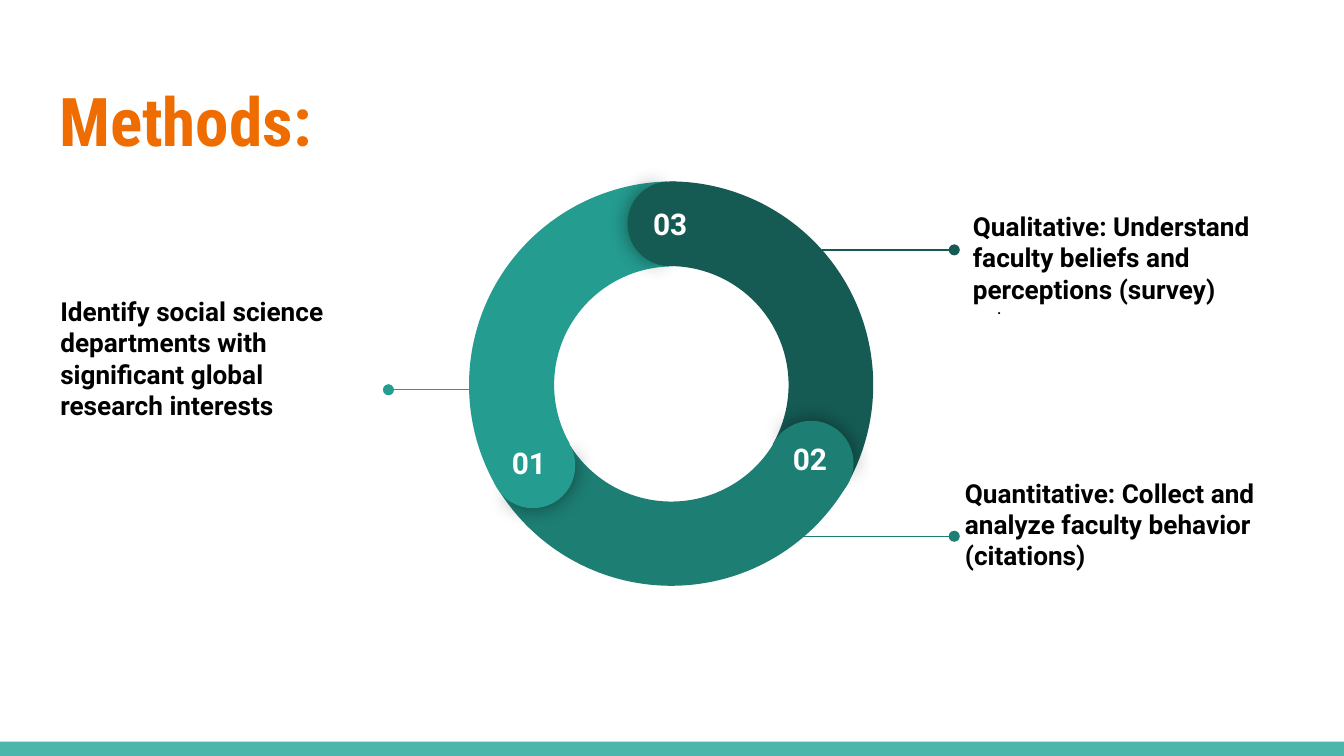
from lxml import etree
from pptx import Presentation
from pptx.dml.color import RGBColor
from pptx.enum import shapes, text
from pptx.oxml.ns import qn
from pptx.util import Pt

COLORS = {"bar": "4DB6AC", "title": "EF6C00", "text": "000000", "label": "FFFFFF",
          "light": "249C90", "medium": "1D7E74", "dark": "155B54"}
INSET = 7.2
RING_SIZE, CAP_SIZE = 218, 45.4

# Boxes are (left, top, width, height) in points.
TITLE = ("Methods:", (24.5, 35.3, 671, 55.4))
# Ring segments: color, (left, top), rotation, arc adjustments
SEGMENTS = [
    ("dark", (249.8, 97.2), 60, (126.225, 197.816, 0.208)),
    ("medium", (250.6, 95.8), 180, (126.225, 196.628, 0.207)),
    ("light", (251.3, 97.2), 300, (126.225, 197.033, 0.209)),
]
# Rounded ends: color, (left, top), rotations of shaded and plain half, number, number position
CAPS = [
    ("light", (262.8, 226.8), (240.6, 60), "01", (265.7, 231.1)),
    ("dark", (336.2, 97.2), (0.7, 180), "03", (341.3, 103)),
    ("medium", (411.8, 225.4), (120.7, 300), "02", (416.2, 229)),
]
CAP_HALVES = [(61.904, 149.962), (40.283, 171.837)]
# Callout lines: color, start x, end x, y
LEADERS = [("light", 257.8, 208.1, 208.8), ("dark", 410.4, 511.2, 133.9),
           ("medium", 410.4, 511.2, 287.3)]
MIDDLE, TOP = text.MSO_ANCHOR.MIDDLE, text.MSO_ANCHOR.TOP
# Text, box, format
NOTES = [
    ("Identify social science departments with significant global research interests",
     (25.2, 156.2, 167, 101.5), {"anchor": TOP, "insets": (INSET, 2, INSET, INSET)}),
    (".", (527, 113.8, 167, 101.5), {"size": 10, "bold": False}),
    ("Qualitative: Understand faculty beliefs and perceptions (survey)",
     (514.1, 42.5, 190.8, 190.8), {}),
    ("Quantitative: Collect and analyze faculty behavior (citations)",
     (509.8, 205.9, 193, 149.8), {}),
]


def rgb(name):
    return RGBColor.from_string(COLORS[name])


def place(shape, box):
    shape.left, shape.top, shape.width, shape.height = map(Pt, box)


def write(shape, content, size=14, color="text", font="Roboto", bold=True, anchor=MIDDLE,
          align=text.PP_ALIGN.LEFT, insets=(INSET,) * 4):
    frame = shape.text_frame
    frame.word_wrap = True
    frame.auto_size = text.MSO_AUTO_SIZE.NONE
    frame.vertical_anchor = anchor
    frame.margin_left, frame.margin_top, frame.margin_right, frame.margin_bottom = map(Pt, insets)
    paragraph = frame.paragraphs[0]
    paragraph.alignment = align
    run = paragraph.add_run()
    run.text = content
    run.font.size, run.font.name, run.font.bold = Pt(size), font, bold
    run.font.color.rgb = rgb(color)


def add_text(slide, content, box, **style):
    write(slide.shapes.add_textbox(*map(Pt, box)), content, **style)


def add_filled(slide, kind, box, color, rotation=0, adjustments=()):
    shape = slide.shapes.add_shape(kind, *map(Pt, box))
    shape.shadow.inherit = False
    shape.fill.solid()
    shape.fill.fore_color.rgb = rgb(color)
    shape.line.fill.background()
    shape.rotation = rotation
    for index, value in enumerate(adjustments):
        shape.adjustments[index] = value
    return shape


def add_glow_shadow(shape):
    """Give the shape a soft black shadow spreading evenly on all sides."""
    effects = shape.element.spPr.find(qn("a:effectLst"))
    shadow = etree.SubElement(effects, qn("a:outerShdw"), blurRad=str(Pt(11.2)),
                              dist="0", dir="0", algn="ctr", rotWithShape="0")
    color = etree.SubElement(shadow, qn("a:srgbClr"), val="000000")
    etree.SubElement(color, qn("a:alpha"), val="43000")


def add_leader(slide, color, start, end, y):
    line = slide.shapes.add_connector(shapes.MSO_CONNECTOR.STRAIGHT,
                                      Pt(start), Pt(y), Pt(end), Pt(y))
    line.line.color.rgb = rgb(color)
    line.line.width = Pt(0.75)
    etree.SubElement(line.line._get_or_add_ln(), qn("a:tailEnd"), type="oval")
    etree.SubElement(line.element.spPr, qn("a:effectLst"))


def main():
    presentation = Presentation()
    presentation.slide_width, presentation.slide_height = Pt(720), Pt(405)
    slide = presentation.slides.add_slide(presentation.slide_layouts[5])
    preset = shapes.MSO_SHAPE

    add_filled(slide, preset.RECTANGLE, (0, 397.4, 720, 7.6), "bar")
    title, title_box = TITLE
    place(slide.shapes.title, title_box)
    write(slide.shapes.title, title, size=36, color="title", font="Roboto Condensed", anchor=TOP)

    for leader in LEADERS:
        add_leader(slide, *leader)
    for color, corner, rotation, adjustments in SEGMENTS:
        add_filled(slide, preset.BLOCK_ARC, (*corner, RING_SIZE, RING_SIZE), color,
                   rotation, adjustments)
    for color, corner, rotations, number, number_corner in CAPS:
        box = (*corner, CAP_SIZE, CAP_SIZE)
        shaded, plain = [add_filled(slide, preset.PIE, box, color, rotation, half)
                         for rotation, half in zip(rotations, CAP_HALVES)]
        add_glow_shadow(shaded)
        add_text(slide, number, (*number_corner, 40.3, 20.9), size=16, color="label",
                 anchor=TOP, align=text.PP_ALIGN.CENTER, insets=(INSET, INSET, 12, INSET))
    for content, box, style in NOTES:
        add_text(slide, content, box, **style)

    presentation.save("out.pptx")


if __name__ == "__main__":
    main()
